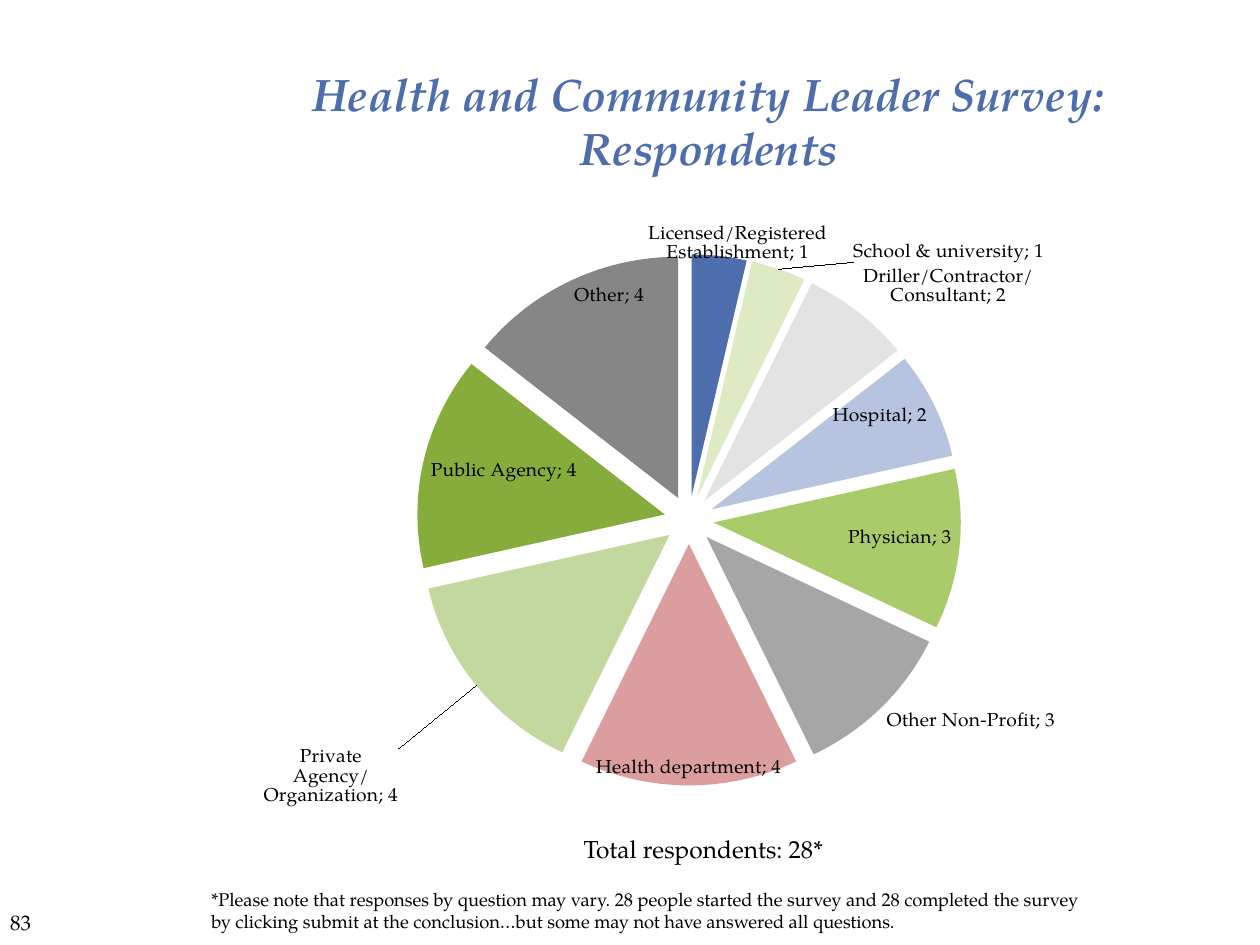
from dataclasses import dataclass
from typing import Any

from pptx import Presentation
from pptx.chart.data import CategoryChartData
from pptx.dml.color import RGBColor
from pptx.enum.chart import XL_CHART_TYPE, XL_LABEL_POSITION
from pptx.enum.text import MSO_ANCHOR, PP_ALIGN
from pptx.oxml import parse_xml
from pptx.oxml.ns import nsdecls
from pptx.util import Cm, Pt

PIE = XL_CHART_TYPE.PIE
INSIDE, OUTSIDE = XL_LABEL_POSITION.INSIDE_END, XL_LABEL_POSITION.OUTSIDE_END
LEFT, CENTER = PP_ALIGN.LEFT, PP_ALIGN.CENTER
TOP, MIDDLE = MSO_ANCHOR.TOP, MSO_ANCHOR.MIDDLE
FACE = "TeX Gyre Pagella"
HUES = {
    "black": "000000", "blue": "4D6DAC", "pale": "DDEAC3", "mist": "E3E3E3",
    "sky": "B7C4DF", "lime": "AACB69", "grey": "A6A6A6", "rose": "DC9D9E",
    "sage": "C3D89E", "green": "86AC3B", "dark": "868686",
}


@dataclass
class Note:
    text: str
    box: tuple[float, float, float, float]
    size: float
    align: Any = CENTER
    anchor: Any = TOP
    hue: str = "black"
    strong: bool = False


@dataclass
class Slice:
    name: str
    count: int
    hue: str
    place: Any
    shift: tuple[float, float] | None = None


NOTES = [
    Note("83", (-0.64, 18.21, 2.11, 1.27), 12),
    Note("Health and Community Leader Survey:\vRespondents",
         (3.18, 0.84, 22.22, 3.18), 26, CENTER, MIDDLE, "blue", True),
    Note("Total respondents: 28*", (10.37, 16.69, 7.62, 0.86), 14),
    Note("*Please note that responses by question may vary. 28 people started "
         "the survey and 28 completed the survey by clicking submit at the "
         "conclusion…but some may not have answered all questions.",
         (4.01, 17.78, 18.42, 1.14), 10.5, LEFT),
]
SLICES = [
    Slice("Licensed/Registered Establishment", 1, "blue", OUTSIDE, (-0.07, 0)),
    Slice("School & university", 1, "pale", OUTSIDE, (0.07, 0)),
    Slice("Driller/Contractor/ Consultant", 2, "mist", OUTSIDE),
    Slice("Hospital", 2, "sky", INSIDE),
    Slice("Physician", 3, "lime", INSIDE),
    Slice("Other Non-Profit", 3, "grey", OUTSIDE),
    Slice("Health department", 4, "rose", INSIDE),
    Slice("Private Agency/Organization", 4, "sage", OUTSIDE, (-0.07, 0.1)),
    Slice("Public Agency", 4, "green", INSIDE),
    Slice("Other", 4, "dark", INSIDE),
]


def paint(hue: str) -> RGBColor:
    return RGBColor.from_string(HUES[hue])


def apply(item: Any, form: dict[str, Any]) -> None:
    for key, value in form.items():
        setattr(item, key, value)


def style(font: Any, size: float, hue: str = "black", strong: bool = False,
          face: str = FACE) -> None:
    apply(font, {"name": face, "size": Pt(size), "bold": strong, "italic": strong})
    font.color.rgb = paint(hue)


def write(slide: Any, note: Note) -> None:
    frame = slide.shapes.add_textbox(*map(Cm, note.box)).text_frame
    apply(frame, {"word_wrap": True, "vertical_anchor": note.anchor})
    line = frame.paragraphs[0]
    apply(line, {"text": note.text, "alignment": note.align})
    for run in line.runs:
        style(run.font, note.size, note.hue, note.strong)


def place(x: float, y: float, more: str = "") -> Any:
    return parse_xml(
        f'<c:layout {nsdecls("c")}><c:manualLayout>{more}'
        f'<c:x val="{x}"/><c:y val="{y}"/></c:manualLayout></c:layout>')


def frame_plot(chart: Any) -> None:
    area = chart._chartSpace.xpath("c:chart/c:plotArea")[0]
    for old in area.xpath("c:layout"):
        area.remove(old)
    head = ('<c:layoutTarget val="inner"/>'
            '<c:xMode val="edge"/><c:yMode val="edge"/>')
    spot = place(0, 0.05, head)
    for key, value in {"w": 0.93, "h": 0.9}.items():
        spot[0].append(parse_xml(f'<c:{key} {nsdecls("c")} val="{value}"/>'))
    area.insert(0, spot)


def draw_pie(slide: Any) -> None:
    data = CategoryChartData()
    data.categories = [part.name for part in SLICES]
    data.add_series("Series 1", [part.count for part in SLICES])
    chart = slide.shapes.add_chart(
        PIE, *map(Cm, (4.24, 4.24, 20.75, 12.19)), data).chart
    apply(chart, {"has_title": False, "has_legend": False})
    style(chart.font, 18, face="Cambria")
    frame_plot(chart)
    chart.plots[0].vary_by_categories = True
    series = chart.plots[0].series[0]
    root = series._element
    root.xpath("c:tx")[0].addnext(
        parse_xml(f'<c:explosion {nsdecls("c")} val="10"/>'))
    labels = series.data_labels
    apply(labels, {"show_value": True, "show_category_name": True})
    style(labels.font, 11)
    for index, part in enumerate(SLICES):
        point = series.points[index]
        point.format.fill.solid()
        point.format.fill.fore_color.rgb = paint(part.hue)
        point.format.line.fill.background()
        style(point.data_label.font, 11)
        point.data_label.position = part.place
    for part, label in zip(SLICES, root.xpath("c:dLbls/c:dLbl")):
        label.xpath("c:showCatName")[0].set("val", "1")
        label.append(parse_xml(
            f'<c:separator {nsdecls("c")}>; </c:separator>'))
        if part.shift:
            label.insert(1, place(*part.shift))


def main() -> None:
    deck = Presentation()
    apply(deck, {"slide_width": Cm(25.4), "slide_height": Cm(19.05)})
    slide = deck.slides.add_slide(deck.slide_layouts[6])
    for note in NOTES[:2]:
        write(slide, note)
    draw_pie(slide)
    for note in NOTES[2:]:
        write(slide, note)
    deck.save("out.pptx")


if __name__ == "__main__":
    main()
